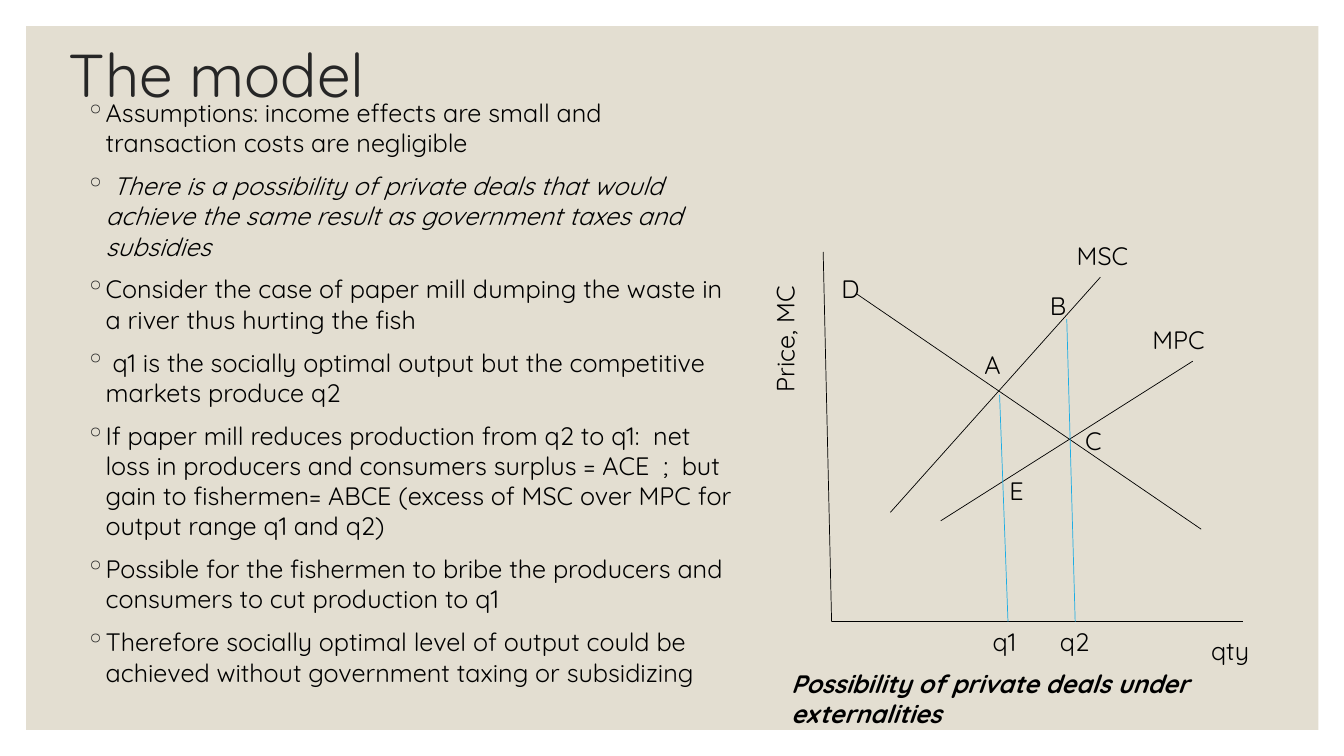
from dataclasses import dataclass
from lxml import etree
from pptx import Presentation
from pptx import util as u
from pptx.dml.color import RGBColor
from pptx.enum import shapes, text
from pptx.oxml.ns import qn


@dataclass(frozen=True)
class Theme:
    font: str = "Quicksand"
    panel: str = "E3DED1"
    title: str = "262626"
    ink: str = "000000"
    drop: str = "1CADE4"
    big: float = 43.2
    body: float = 18
    line: float = 0.5


class Page:
    def __init__(self, deck, theme):
        self.theme = theme
        self.slide = deck.slides.add_slide(deck.slide_layouts[6])

    def panel(self, *box):
        kind = shapes.MSO_SHAPE.RECTANGLE
        shape = self.slide.shapes.add_shape(kind, *map(u.Pt, box))
        shape.shadow.inherit = False
        shape.fill.solid()
        shape.fill.fore_color.rgb = RGBColor.from_string(self.theme.panel)
        shape.line.fill.background()

    def box(self, *box):
        shape = self.slide.shapes.add_textbox(*map(u.Pt, box))
        shape.text_frame.word_wrap = True
        return shape

    def style(self, para, size=None, color=None):
        font = para.font
        font.name = self.theme.font
        font.size = u.Pt(size or self.theme.body)
        font.color.rgb = RGBColor.from_string(color or self.theme.ink)
        return font

    def title(self, words, *box):
        frame = self.box(*box).text_frame
        frame.vertical_anchor = text.MSO_ANCHOR.MIDDLE
        para = frame.paragraphs[0]
        para.text = words
        para.line_spacing = 0.9
        self.style(para, self.theme.big, self.theme.title)

    def label(self, words, x, y, width, height=28.8, turn=0, strong=False):
        shape = self.box(x, y, width, height)
        shape.rotation = turn
        para = shape.text_frame.paragraphs[0]
        para.text = words
        font = self.style(para)
        if strong:
            font.bold = font.italic = True

    def bullets(self, items, *box):
        frame = self.box(*box).text_frame
        for i, (words, slant) in enumerate(items):
            para = frame.add_paragraph() if i else frame.paragraphs[0]
            para.text = words
            para.space_before = u.Pt(9)
            self.style(para).italic = slant
            props = para._p.get_or_add_pPr()
            props.set("marL", str(u.Pt(14.4)))
            props.set("indent", str(-u.Pt(14.4)))
            tint = etree.Element(qn("a:buClr"))
            etree.SubElement(tint, qn("a:srgbClr"), val=self.theme.title)
            mark = etree.Element(qn("a:buChar"), char="◦")
            first = props.find(qn("a:defRPr"))
            first.addprevious(tint)
            first.addprevious(mark)

    def line(self, ends, color):
        kind = shapes.MSO_CONNECTOR.STRAIGHT
        line = self.slide.shapes.add_connector(kind, *map(u.Pt, ends))
        line.line.width = u.Pt(self.theme.line)
        line.line.color.rgb = RGBColor.from_string(color)
        etree.SubElement(line._element.spPr, qn("a:effectLst"))


POINTS = [
    ("Assumptions: income effects are small and transaction costs are negligible", False),
    (" There is a possibility of private deals that would achieve the same result "
     "as government taxes and subsidies", True),
    ("Consider the case of paper mill dumping the waste in a river thus hurting the fish", False),
    (" q1 is the socially optimal output but the competitive markets produce q2", False),
    ("If paper mill reduces production from q2 to q1:  net loss in producers and "
     "consumers surplus = ACE  ;  but gain to fishermen= ABCE (excess of MSC over MPC "
     "for output range q1 and q2)", False),
    ("Possible for the fishermen to bribe the producers and consumers to cut "
     "production to q1", False),
    ("Therefore socially optimal level of output could be achieved without "
     "government taxing or subsidizing", False),
]
AXES = [(588, 180, 594, 444), (594, 444, 888, 444)]
CURVES = [(612, 210, 858, 378), (636, 366, 786, 198), (672, 372, 852, 258)]
DROPS = [(714, 282, 720, 444), (762, 228, 768, 444)]
LABELS = [
    ("D", 594, 192, 30),
    ("E", 714, 336, 42),
    ("C", 768, 300, 36),
    ("A", 696, 246, 42),
    (" B", 738, 204, 36),
    ("MPC", 816, 228, 96),
    ("MSC", 762, 168, 78),
    ("q1", 702, 444, 48),
    ("qty", 858, 450, 66),
    ("q2", 750, 444, 48),
]


def main():
    deck = Presentation()
    deck.slide_width, deck.slide_height = u.Pt(960), u.Pt(540)
    theme = Theme()
    page = Page(deck, theme)
    page.panel(18.7, 18.7, 923, 502.6)
    page.title("The model", 42, 30, 384, 51)
    page.bullets(POINTS, 54, 66, 480, 432)
    for ends in AXES + CURVES:
        page.line(ends, theme.ink)
    for ends in DROPS:
        page.line(ends, theme.drop)
    page.label("Price, MC", 500.4, 213, 120, turn=270)
    for item in LABELS:
        page.label(*item)
    page.label("Possibility of private deals under externalities",
               558, 474, 372, 50, strong=True)
    deck.save("out.pptx")


if __name__ == "__main__":
    main()
